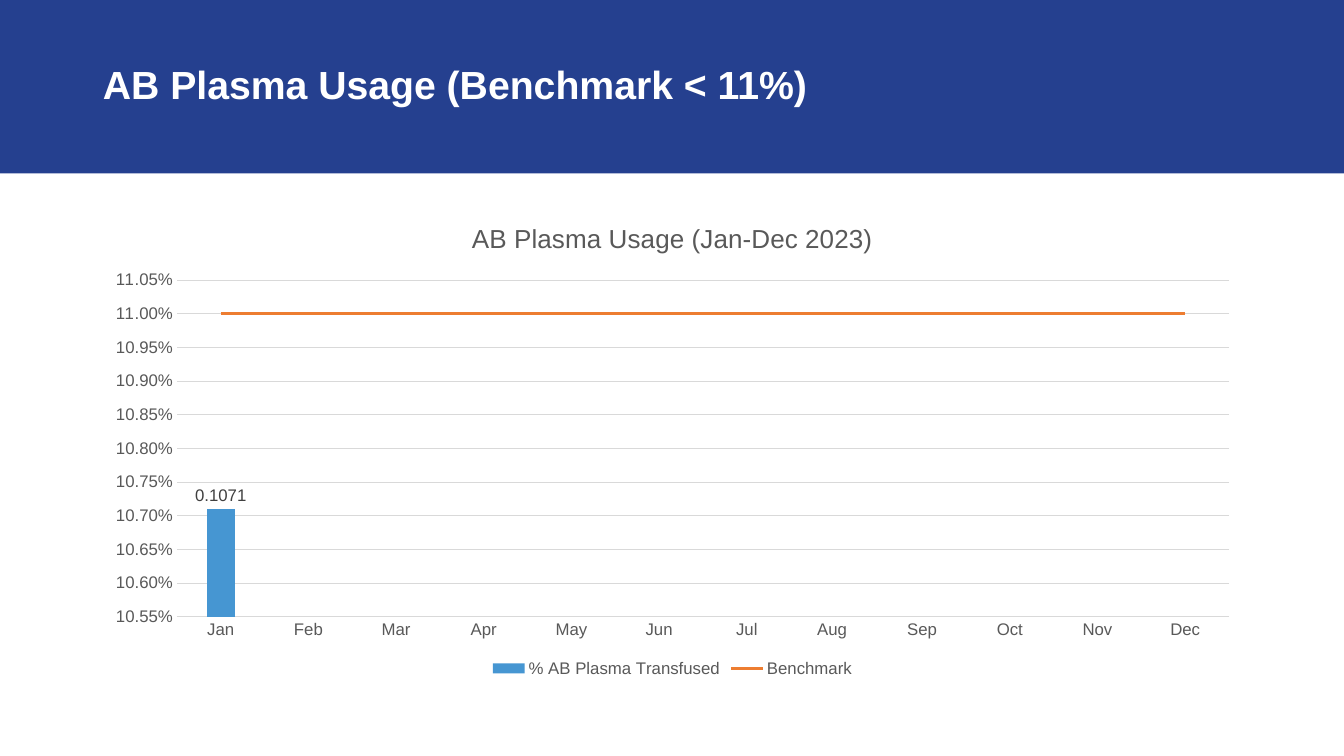
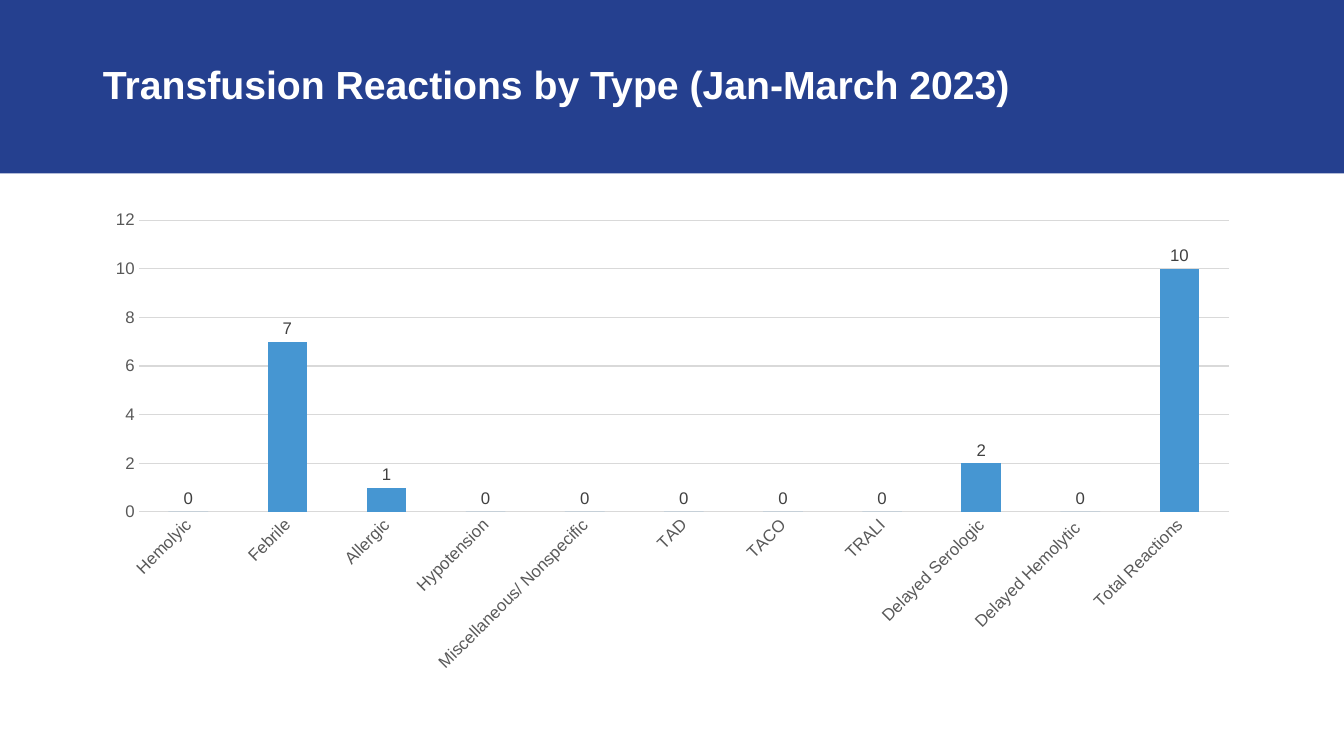
from lxml import etree
from pptx import Presentation
from pptx.chart.data import CategoryChartData
from pptx.dml.color import RGBColor
from pptx.enum.chart import (XL_CHART_TYPE as ChartType, XL_LABEL_POSITION as LabelPosition,
                             XL_LEGEND_POSITION as LegendPosition, XL_MARKER_STYLE as Marker,
                             XL_TICK_MARK as TickMark)
from pptx.enum.shapes import MSO_SHAPE as Shape
from pptx.enum.text import MSO_ANCHOR as Anchor, PP_ALIGN as Align
from pptx.oxml.ns import qn
from pptx.util import Pt

PX = 9144  # 100 px to the inch
FONT = "Arial"
COLORS = {"band": "25408F", "title": "FFFFFF", "bar": "4696D2", "benchmark": "ED7D31",
          "grid": "D9D9D9", "axis": "595959", "label": "404040"}

SLIDE_SIZE = (1333, 750)
BAND = (0, 0, 1333, 172)
TITLE = (92, 14, 1150, 145)
CHART = (92, 200, 1150, 476)

MONTHS = ["Jan", "Feb", "Mar", "Apr", "May", "Jun",
          "Jul", "Aug ", "Sep", "Oct", "Nov", "Dec"]
SLIDES = [
    {"title": "AB Plasma Usage (Benchmark < 11%)",
     "chart_title": "AB Plasma Usage (Jan-Dec 2023)",
     "categories": MONTHS,
     "bars": ("% AB Plasma Transfused", [0.1071] + [None] * 11),
     "benchmark": ("Benchmark", [0.11] * 12),
     "scale": (0.1055, 0.1105, 0.0005),
     "axis_format": "0.00%", "label_format": "General",
     "gap": 219, "overlap": -27, "axis_line": True, "rotation": 0},
    {"title": "Transfusion Reactions by Type (Jan-March 2023)",
     "categories": ["Hemolyic", "Febrile", "Allergic", "Hypotension",
                    "Miscellaneous/ Nonspecific", "TAD", "TACO", "TRALI",
                    "Delayed Serologic", "Delayed Hemolytic ", "Total Reactions"],
     "bars": ("Series 1", [0, 7, 1, 0, 0, 0, 0, 0, 2, 0, 10]),
     "scale": (0, 12, 2),
     "axis_format": "#,##0", "label_format": "#,##0",
     "gap": 150, "overlap": 0, "axis_line": False, "rotation": -45},
]


def emu(lengths):
    return [length * PX for length in lengths]


def rgb(name):
    return RGBColor.from_string(COLORS[name])


def style_font(font, size, color, bold=False):
    font.name, font.size, font.bold = FONT, Pt(size), bold
    font.color.rgb = rgb(color)


def style_line(line, color, width):
    line.color.rgb = rgb(color)
    line.width = Pt(width)


def add_band(page, layout):
    """Draw the title band and move it to the layout, behind the title."""
    band = page.shapes.add_shape(Shape.RECTANGLE, *emu(BAND))
    band.shadow.inherit = False
    band.fill.solid()
    band.fill.fore_color.rgb = rgb("band")
    band.line.fill.background()
    layout.shapes._spTree.insert(2, band._element)


def write_title(page, text):
    title = page.shapes.title
    title.left, title.top, title.width, title.height = emu(TITLE)
    title.text_frame.text = text
    title.text_frame.vertical_anchor = Anchor.MIDDLE
    para = title.text_frame.paragraphs[0]
    para.alignment = Align.LEFT
    para.line_spacing = 0.9
    style_font(para.font, 28, "title", bold=True)


def turn_last_bars_into_line(chart):
    """Move the last bar series to a line plot on the same axes."""
    bar_plot = chart._chartSpace.find(".//" + qn("c:barChart"))
    series = bar_plot.findall(qn("c:ser"))[-1]
    for bar_setting in series.findall(qn("c:invertIfNegative")):
        series.remove(bar_setting)
    line_plot = etree.SubElement(bar_plot.getparent(), qn("c:lineChart"))
    bar_plot.addnext(line_plot)
    etree.SubElement(line_plot, qn("c:grouping")).set("val", "standard")
    etree.SubElement(line_plot, qn("c:varyColors")).set("val", "0")
    line_plot.append(series)
    etree.SubElement(line_plot, qn("c:marker")).set("val", "1")
    for axis_id in bar_plot.findall(qn("c:axId")):
        etree.SubElement(line_plot, qn("c:axId")).set("val", str(axis_id.get("val")))
    line = chart.plots[1].series[0]
    style_line(line.format.line, "benchmark", 2.25)
    line.marker.style = Marker.NONE
    line.smooth = False


def style_axes(chart, content):
    categories, values = chart.category_axis, chart.value_axis
    for axis in (categories, values):
        axis.major_tick_mark = axis.minor_tick_mark = TickMark.NONE
        style_font(axis.tick_labels.font, 12, "axis")
        axis.format.line.fill.background()
    if content["axis_line"]:
        style_line(categories.format.line, "grid", 0.75)
    if content["rotation"]:
        body = categories._element.find(qn("c:txPr")).find(qn("a:bodyPr"))
        body.set("rot", str(content["rotation"] * 60000))
    values.minimum_scale, values.maximum_scale, values.major_unit = content["scale"]
    values.tick_labels.number_format = content["axis_format"]
    values.tick_labels.number_format_is_linked = False
    style_line(values.major_gridlines.format.line, "grid", 0.75)


def style_bars(plot, content):
    plot.gap_width, plot.overlap = content["gap"], content["overlap"]
    plot.vary_by_categories = False
    bars = plot.series[0]
    bars.format.fill.solid()
    bars.format.fill.fore_color.rgb = rgb("bar")
    labels = bars.data_labels
    labels.show_value = True
    labels.position = LabelPosition.OUTSIDE_END
    labels.number_format = content["label_format"]
    labels.number_format_is_linked = False
    style_font(labels.font, 12, "label")


def add_chart(page, content):
    data = CategoryChartData()
    data.categories = content["categories"]
    data.add_series(*content["bars"])
    if "benchmark" in content:
        data.add_series(*content["benchmark"])
    frame = page.shapes.add_chart(ChartType.COLUMN_CLUSTERED, *emu(CHART), data)
    chart = frame.chart
    chart.font.name, chart.font.size = FONT, Pt(10)
    style_axes(chart, content)
    style_bars(chart.plots[0], content)

    chart.has_title = "chart_title" in content
    if chart.has_title:
        text = chart.chart_title.text_frame
        text.text = content["chart_title"]
        style_font(text.paragraphs[0].font, 18.6, "axis")

    chart.has_legend = "benchmark" in content
    if chart.has_legend:
        turn_last_bars_into_line(chart)
        chart.legend.position = LegendPosition.BOTTOM
        chart.legend.include_in_layout = False
        style_font(chart.legend.font, 12, "axis")


def main():
    deck = Presentation()
    deck.slide_width, deck.slide_height = emu(SLIDE_SIZE)
    layout = deck.slide_layouts.get_by_name("Title Only")
    for content in SLIDES:
        page = deck.slides.add_slide(layout)
        write_title(page, content["title"])
        add_chart(page, content)
    add_band(deck.slides[0], layout)
    deck.save("out.pptx")


if __name__ == "__main__":
    main()
